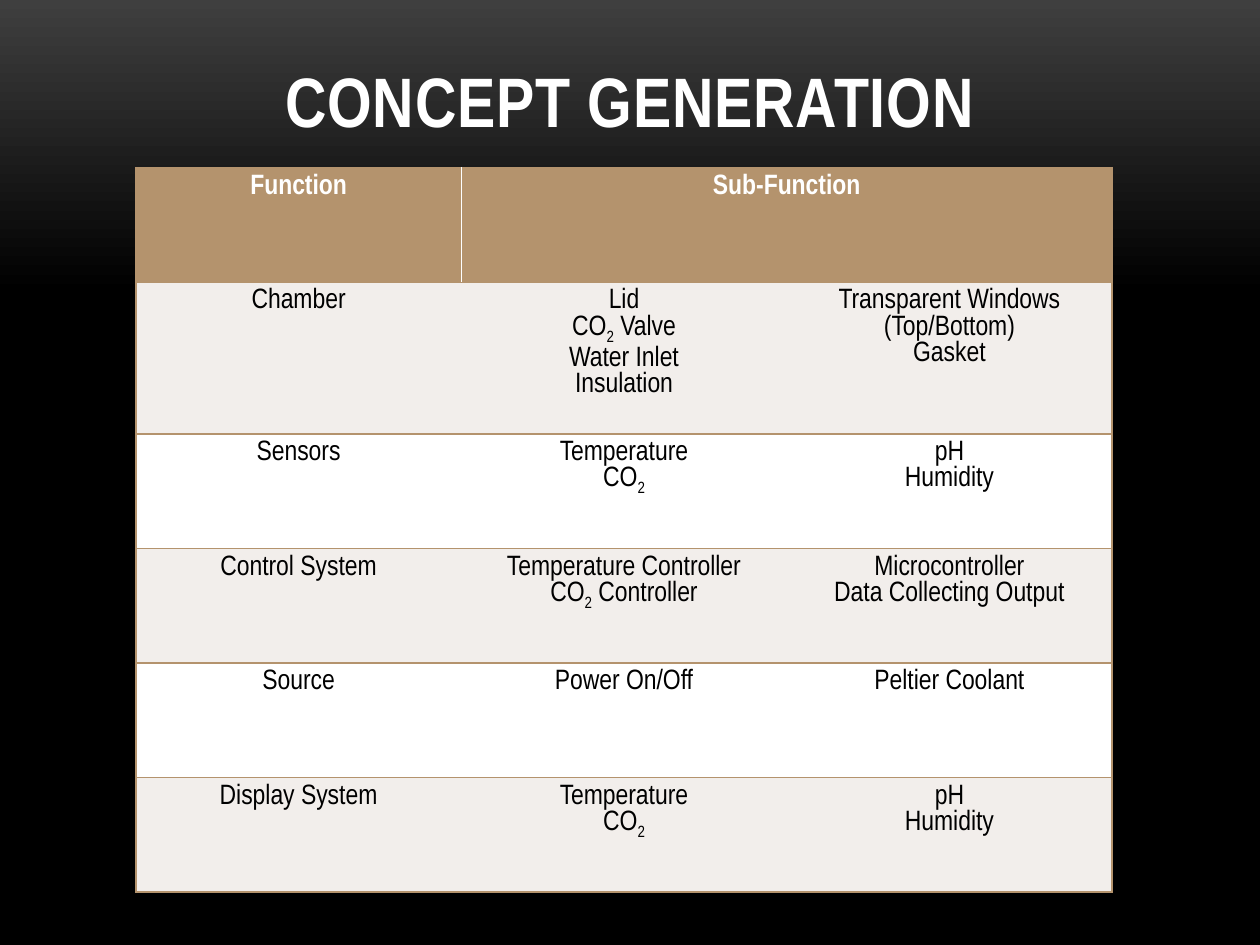
import pptx
import pptx.util
import pptx.dml.color
import pptx.enum.text
import pptx.oxml
import pptx.oxml.ns
from pptx.util import Cm

FONT = "Arial Narrow"
TAN, PALE, WHITE, BLACK = "B4936D", "F2EEEB", "FFFFFF", "000000"

TITLE = "CONCEPT GENERATION"
HEADER = ["Function", "Sub-Function"]
# Each cell is a list of paragraphs; text between tildes is subscript.
ROWS = [
    (["Chamber"], ["Lid", "CO~2~ Valve", "Water Inlet", "Insulation"],
     ["Transparent Windows (Top/Bottom)", "Gasket"]),
    (["Sensors"], ["Temperature", "CO~2~"], ["pH", "Humidity"]),
    (["Control System"], ["Temperature Controller", "CO~2~ Controller"],
     ["Microcontroller", "Data Collecting Output"]),
    (["Source"], ["Power On/Off"], ["Peltier Coolant"]),
    (["Display System"], ["Temperature", "CO~2~"], ["pH", "Humidity"]),
]
COL_W, ROW_H, TALL_ROW_H = 6.56, 2.31, 2.95


def rgb(color):
    return pptx.dml.color.RGBColor.from_string(color)


def write(tf, lines, size=16, color=BLACK, bold=False, spacing=None):
    """Fill a text frame with centred paragraphs."""
    for i, line in enumerate(lines):
        p = tf.paragraphs[0] if i == 0 else tf.add_paragraph()
        p.alignment = pptx.enum.text.PP_ALIGN.CENTER
        for j, part in enumerate(line.split("~")):
            if not part:
                continue
            r = p.add_run()
            r.text = part
            r.font.name = FONT
            r.font.size = pptx.util.Pt(size)
            r.font.bold = bold
            r.font.color.rgb = rgb(color)
            if j % 2:
                r.font._element.set("baseline", "-25000")
            if spacing:
                r.font._element.set("spc", str(spacing))


def style_cell(cell, fill, left=None, right=None):
    """Set the borders, then the fill; a side without a colour has no line."""
    tc_pr = cell._tc.get_or_add_tcPr()
    ns = pptx.oxml.ns.nsdecls("a")
    for side, color in (("L", left), ("R", right), ("T", TAN), ("B", TAN)):
        paint = (f'<a:solidFill><a:srgbClr val="{color}"/></a:solidFill>'
                 if color else "<a:noFill/>")
        tc_pr.append(pptx.oxml.parse_xml(
            f'<a:ln{side} {ns} w="12700">{paint}</a:ln{side}>'))
    cell.fill.solid()
    cell.fill.fore_color.rgb = rgb(fill)


prs = pptx.Presentation()
prs.slide_width, prs.slide_height = Cm(25.4), Cm(19.05)
s = prs.slides.add_slide(prs.slide_layouts[6])

bg = s.background.fill
bg.gradient()
bg.gradient_angle = 270
for stop, (pos, color) in zip(bg.gradient_stops, [(0, "3F3F3F"), (0.31, BLACK)]):
    stop.position = pos
    stop.color.rgb = rgb(color)

tf = s.shapes.add_textbox(Cm(1.7), Cm(-0.2), Cm(22), Cm(3.17)).text_frame
tf.word_wrap = True
tf.vertical_anchor = pptx.enum.text.MSO_ANCHOR.BOTTOM
write(tf, [TITLE], size=40, color=WHITE, bold=True, spacing=50)

heights = [TALL_ROW_H if i == 1 else ROW_H for i in range(len(ROWS) + 1)]
table = s.shapes.add_table(len(heights), 3, Cm(2.74), Cm(3.38),
                           Cm(3 * COL_W), Cm(sum(heights))).table
for col in table.columns:
    col.width = Cm(COL_W)
for row, h in zip(table.rows, heights):
    row.height = Cm(h)

table.cell(0, 1).merge(table.cell(0, 2))
for c, text in enumerate(HEADER):
    write(table.cell(0, c).text_frame, [text], color=WHITE, bold=True)
for c, (left, right) in enumerate([(TAN, WHITE), (WHITE, TAN), (None, TAN)]):
    style_cell(table.cell(0, c), TAN, left, right)

for i, row in enumerate(ROWS, 1):
    for c, lines in enumerate(row):
        cell = table.cell(i, c)
        write(cell.text_frame, lines)
        style_cell(cell, PALE if i % 2 else WHITE,
                   left=TAN if c == 0 else None,
                   right=TAN if c == 2 else None)

prs.save("out.pptx")
